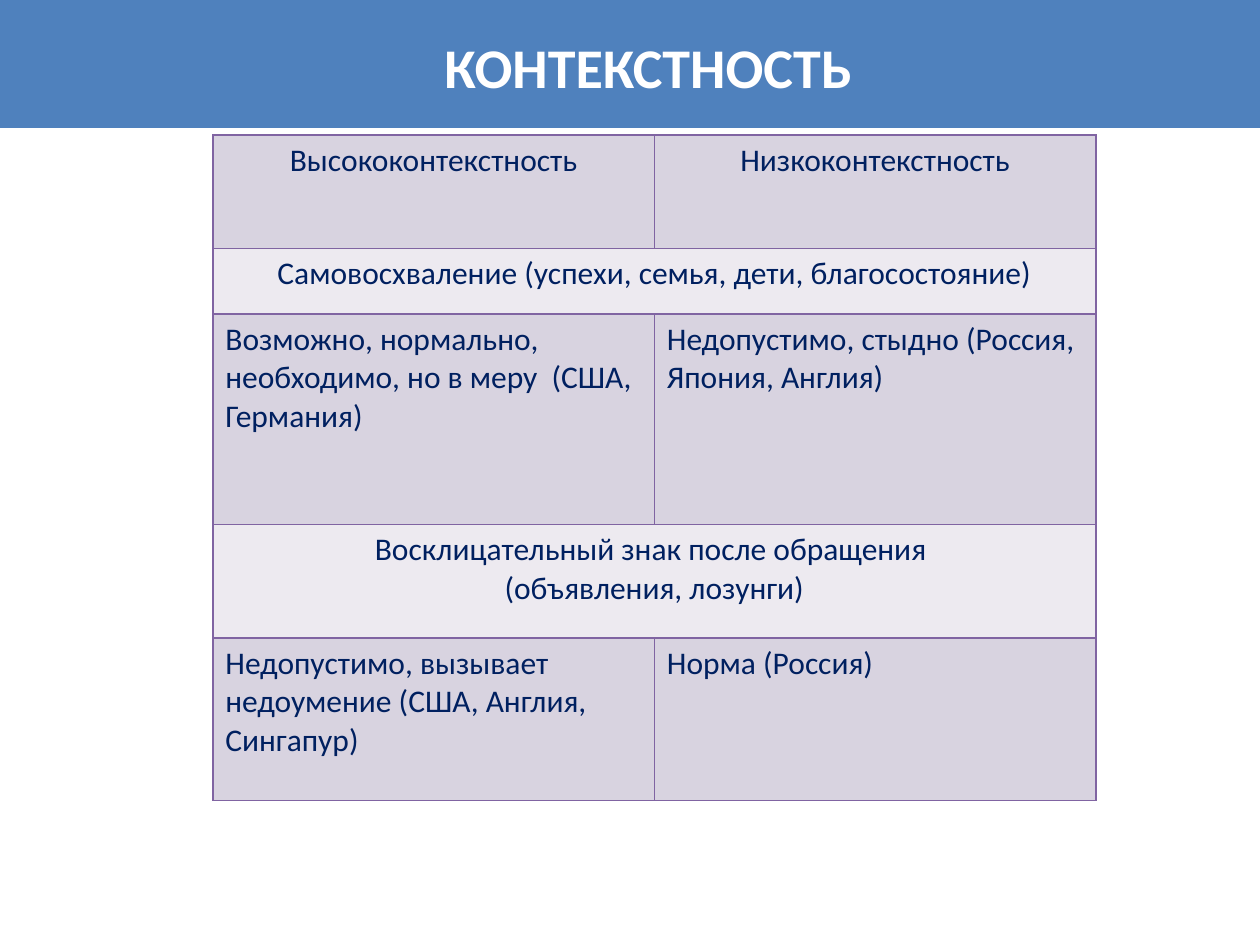
from lxml.etree import SubElement
from pptx import Presentation
from pptx.dml.color import RGBColor
from pptx.enum.shapes import MSO_SHAPE as SHAPE
from pptx.enum.text import MSO_AUTO_SIZE as AUTO_SIZE, PP_ALIGN as ALIGN
from pptx.oxml.ns import qn
from pptx.util import Cm, Pt

BLUE = RGBColor(0x4F, 0x81, 0xBD)
WHITE = RGBColor(0xFF, 0xFF, 0xFF)
NAVY = RGBColor(0x00, 0x20, 0x60)
PURPLE = RGBColor(0x80, 0x64, 0xA2)
BANDS = RGBColor(0xD8, 0xD3, 0xE0), RGBColor(0xED, 0xEA, 0xF0)

# Row height in cm and its cells; a single cell spans the whole row.
ROWS = [
    (2.29, ["Высококонтекстность", "Низкоконтекстность"]),
    (1.32, ["Самовосхваление (успехи, семья, дети, благосостояние)"]),
    (4.24, ["Возможно, нормально, необходимо, но в меру  (США, Германия)",
            "Недопустимо, стыдно (Россия, Япония, Англия)"]),
    (2.29, ["Восклицательный знак после обращения \n(объявления, лозунги)"]),
    (3.28, ["Недопустимо, вызывает недоумение (США, Англия, Сингапур)",
            "Норма (Россия)"]),
]


def write(tf, text, size=18, color=NAVY, bold=False, align=ALIGN.LEFT):
    for i, line in enumerate(text.split("\n")):
        p = tf.paragraphs[0] if i == 0 else tf.add_paragraph()
        p.alignment = align
        r = p.add_run()
        r.text = line
        r.font.name = "Calibri"
        r.font.size = Pt(size)
        r.font.bold = bold
        r.font.color.rgb = color


def add_borders(cell, color, width):
    tc_pr = cell._tc.get_or_add_tcPr()
    for side in ("lnL", "lnR", "lnT", "lnB"):
        ln = SubElement(tc_pr, qn(f"a:{side}"), w=str(Pt(width)))
        fill = SubElement(ln, qn("a:solidFill"))
        SubElement(fill, qn("a:srgbClr"), val=str(color))


def add_title_band(s, left, top, width, height):
    sp = s.shapes.add_shape(SHAPE.RECTANGLE, Cm(left), Cm(top), Cm(width), Cm(height))
    sp.shadow.inherit = False
    sp.fill.solid()
    sp.fill.fore_color.rgb = BLUE
    sp.line.color.rgb = BLUE
    sp.line.width = Pt(2)

    box = s.shapes.add_textbox(Cm(left + 8.71), Cm(top + 0.53), Cm(8.81), Cm(1.62))
    tf = box.text_frame
    tf.word_wrap = False
    tf.auto_size = AUTO_SIZE.SHAPE_TO_FIT_TEXT
    write(tf, "КОНТЕКСТНОСТЬ", size=32, color=WHITE, bold=True)


def add_comparison_table(s, left, top, width):
    height = sum(h for h, _ in ROWS)
    table = s.shapes.add_table(len(ROWS), 2, Cm(left), Cm(top),
                               Cm(width), Cm(height)).table
    for col in table.columns:
        col.width = Cm(width / 2)
    for i, (row_height, texts) in enumerate(ROWS):
        table.rows[i].height = Cm(row_height)
        cells = [table.cell(i, j) for j in range(2)]
        for cell in cells:
            add_borders(cell, PURPLE, 1)
            cell.fill.solid()
            cell.fill.fore_color.rgb = BANDS[i % 2]
        spans = len(texts) == 1
        if spans:
            cells[0].merge(cells[1])
        align = ALIGN.CENTER if spans or i == 0 else ALIGN.LEFT
        for cell, text in zip(cells, texts):
            write(cell.text_frame, text, align=align)


def main():
    prs = Presentation()
    prs.slide_width, prs.slide_height = Cm(25.4), Cm(19.05)
    s = prs.slides.add_slide(prs.slide_layouts[6])
    add_comparison_table(s, 4.29, 2.72, 17.8)
    add_title_band(s, 0, 0, 25.4, 2.54)
    prs.save("out.pptx")


if __name__ == "__main__":
    main()
